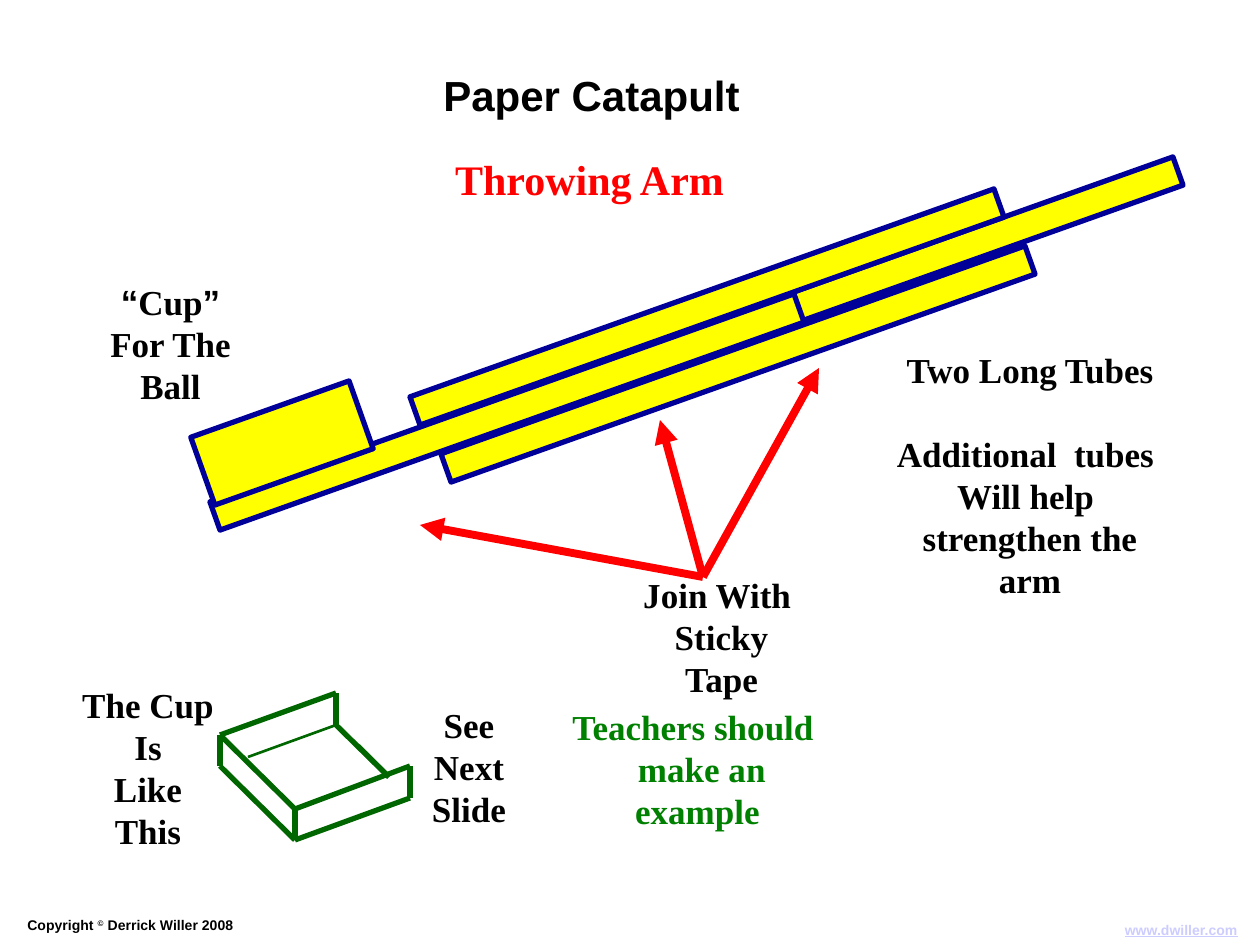
"""Build the Paper Catapult throwing arm slide."""
from lxml.etree import SubElement
from pptx import Presentation
from pptx.dml.color import RGBColor
from pptx.enum.shapes import MSO_CONNECTOR as CONN, MSO_SHAPE as SHAPE
from pptx.enum.text import MSO_ANCHOR as ANCHOR, PP_ALIGN as ALIGN
from pptx.oxml.ns import qn
from pptx.util import Pt

PX = 914400 / 126
SANS, SERIF = "Arial", "Times New Roman"
BLACK, RED, GREEN = "000000", "FF0000", "008000"
YELLOW, NAVY, DARK_GREEN, PALE_BLUE = "FFFF00", "000099", "006600", "CCCCFF"


def emu(*lengths):
    return [round(n * PX) for n in lengths]


def rgb(value):
    return RGBColor.from_string(value)


class Slide:
    def __init__(self, s):
        self.s = s

    def text(self, box, paras, size=20, color=BLACK, font=SERIF,
             align=ALIGN.CENTER, anchor=ANCHOR.MIDDLE, wrap=False):
        tf = self.s.shapes.add_textbox(*emu(*box)).text_frame
        tf.word_wrap, tf.vertical_anchor = wrap, anchor
        for i, runs in enumerate(paras):
            p = tf.paragraphs[0] if i == 0 else tf.add_paragraph()
            p.alignment, p.line_spacing = align, Pt(size * 1.2)
            for run in [runs] if isinstance(runs, str) else runs:
                words, look = (run, {}) if isinstance(run, str) else run
                self.run(p, words, size, **{"color": color, "font": font, **look})
        return tf

    def run(self, p, words, size, color, font, underline=None, raised=False):
        for i, line in enumerate(words.split("\n")):
            if i:
                p.add_line_break()
            r = p.add_run()
            r.text = line
            f = r.font
            f.name, f.size, f.bold, f.underline = font, Pt(size), True, underline
            f.color.rgb = rgb(color)
            if raised:
                r._r.get_or_add_rPr().set("baseline", "30000")

    def bar(self, x, y, w, h):
        sp = self.s.shapes.add_shape(SHAPE.RECTANGLE, *emu(x, y, w, h))
        sp.shadow.inherit = False
        sp.rotation = 340.4
        sp.fill.solid()
        sp.fill.fore_color.rgb = rgb(YELLOW)
        sp.line.color.rgb = rgb(NAVY)
        sp.line.width = Pt(3)

    def line(self, start, end, color, width, arrow=False, parent=None):
        shapes = (parent or self.s).shapes
        cn = shapes.add_connector(CONN.STRAIGHT, *emu(*start, *end))
        cn.line.color.rgb = rgb(color)
        cn.line.width = Pt(width)
        spPr = cn._element.spPr
        if arrow:
            SubElement(spPr.find(qn("a:ln")), qn("a:tailEnd"), type="triangle")
        SubElement(spPr, qn("a:effectLst"))

    def drawing(self, points, strokes, color):
        group = self.s.shapes.add_group_shape()
        for (a, b), width in strokes:
            self.line(points[a], points[b], color, width, parent=group)


def main():
    prs = Presentation()
    prs.slide_width, prs.slide_height = emu(1260, 945)
    s = Slide(prs.slides.add_slide(prs.slide_layouts[6]))

    s.text((431, 63, 340, 63), ["Paper Catapult"], 24, font=SANS,
           align=ALIGN.LEFT, anchor=ANCHOR.TOP, wrap=True)
    footer = {"size": 8, "font": SANS, "anchor": ANCHOR.TOP, "wrap": True}
    s.text((15, 910, 712, 30),
           [["Copyright ", ("©", {"raised": True}), " Derrick Willer 2008"]],
           align=ALIGN.LEFT, **footer)
    s.text((1081, 915, 169, 30),
           [[" ", ("www.dwiller.com", {"color": PALE_BLUE, "underline": True})]],
           align=ALIGN.RIGHT, **footer)

    tube = (620, 30)
    for corner in [(576, 260), (197, 397)]:
        s.bar(*corner, *tube)
    s.bar(198, 407, 168, 72)
    for corner in [(397, 292), (428, 349)]:
        s.bar(*corner, *tube)

    s.text((436, 147, 307, 63), ["Throwing Arm"], 24, RED)
    s.text((625, 567, 193, 139), ["Join With ", "Sticky", "Tape"])
    quote = {"font": SANS}
    s.text((92, 274, 157, 139),
           [[("“", quote), "Cup", ("”", quote)], "For The", "Ball"])
    tubes = s.text((878, 341, 304, 267),
                   ["Two Long Tubes", "Additional  tubes ", "Will help ",
                    "strengthen the", "arm"])
    tubes.paragraphs[1].space_before = Pt(24)
    s.text((63, 677, 170, 180), ["The Cup", "Is", "Like", "This"])
    s.text((414, 697, 110, 139), ["See", "Next", "Slide"])
    s.text((545, 720, 305, 97), ["Teachers should \n make an\nexample"], color=GREEN)

    for tip in [(660, 420), (819, 368), (420, 525)]:
        s.line((703, 577), tip, RED, 4.5, arrow=True)

    corners = {
        "A": (336, 693), "B": (220, 735), "C": (336, 725), "D": (248, 757),
        "E": (410, 766), "F": (295, 809), "G": (410, 798), "H": (295, 840),
        "I": (389, 777), "J": (220, 766), "K": (358, 746),
    }
    edges = ["AB", "AC", "EF", "GH", "EG", "CI", "KI", "BF", "FH", "BJ", "JH"]
    s.drawing(corners, [("CD", 1.5)] + [(e, 3) for e in edges], DARK_GREEN)

    prs.save("out.pptx")


if __name__ == "__main__":
    main()
